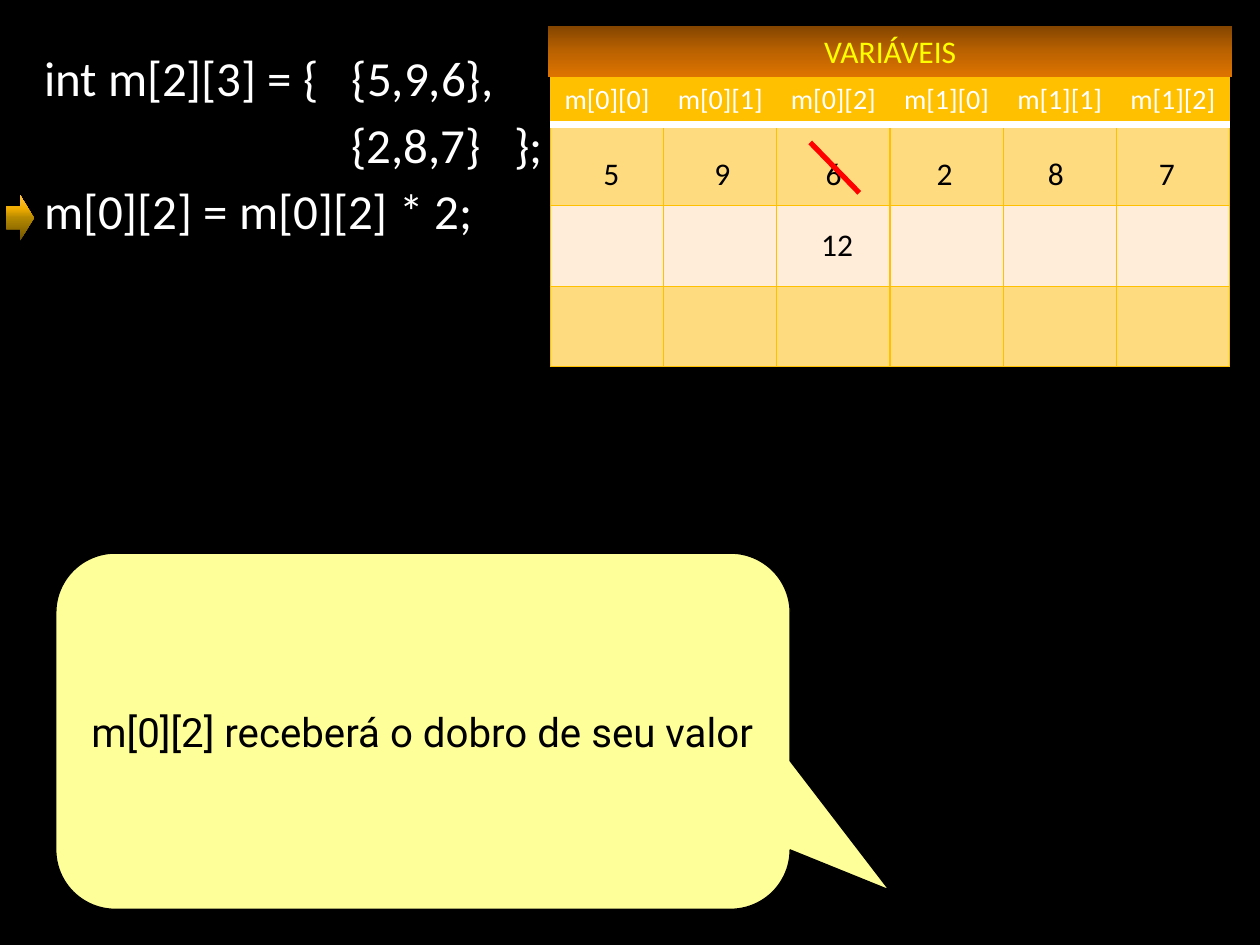
from dataclasses import dataclass
from typing import Any, Sequence

import pptx
import pptx.dml.color
import pptx.enum.shapes
import pptx.enum.text
import pptx.oxml
import pptx.oxml.ns
import pptx.util

Pt = pptx.util.Pt
Color = pptx.dml.color.RGBColor.from_string
Shapes = pptx.enum.shapes.MSO_SHAPE
Align = pptx.enum.text.PP_ALIGN
Anchor = pptx.enum.text.MSO_ANCHOR
NAMESPACE = pptx.oxml.ns.nsdecls("a")


@dataclass(frozen=True)
class Theme:
    background: str = "000000"
    light: str = "FFFFFF"
    dark: str = "000000"
    heading: str = "FFFF00"
    gold: str = "FFC000"
    band_odd: str = "FFDB80"
    band_even: str = "FFECD9"
    callout: str = "FFFF99"
    strike: str = "FF0000"
    heading_stops: tuple = ((0, "844500"), (50, "BB6200"), (100, "DE7400"))
    arrow_stops: tuple = ((0, "705400"), (50, "B48800"), (70, "F0AC00"), (100, "FFC342"))
    font: str = "Calibri"
    callout_font: str = "Roboto"
    code_size: float = 28
    callout_size: float = 23
    body_size: float = 18
    header_size: float = 16


@dataclass(frozen=True)
class Box:
    left: float
    top: float
    width: float
    height: float

    def lengths(self) -> tuple:
        return Pt(self.left), Pt(self.top), Pt(self.width), Pt(self.height)


THEME = Theme()
CODE_LINES = ("int m[2][3] = {   {5,9,6},", "\t{2,8,7}   };", "m[0][2] = m[0][2] * 2;")
CODE_TAB = 175.6
VARIABLES = [f"m[{row}][{column}]" for row in range(2) for column in range(3)]
VALUES = ("5", "9", "6", "2", "8", "7")
VALUE_STEP = 63.5
ROW_HEIGHTS = (27.4, 46.1, 46.1, 46.1)


def write_text(frame: Any, lines: Sequence[str], *, size: float = THEME.body_size,
               color: str = THEME.dark, font: str = THEME.font, align: Any = Align.LEFT,
               anchor: Any = Anchor.TOP, tabs: Sequence[float] = (),
               line_spacing: float = 1.0, space_before: float = 0) -> None:
    frame.word_wrap = True
    frame.vertical_anchor = anchor
    for index, line in enumerate(lines):
        para = frame.paragraphs[0] if index == 0 else frame.add_paragraph()
        para.alignment = align
        para.line_spacing = line_spacing
        para.space_before = Pt(space_before if index else 0)
        if tabs:
            stops = "".join(f'<a:tab pos="{Pt(tab)}" algn="l"/>' for tab in tabs)
            para._p.get_or_add_pPr().append(
                pptx.oxml.parse_xml(f"<a:tabLst {NAMESPACE}>{stops}</a:tabLst>"))
        span = para.add_run()
        span.text = line
        span.font.size = Pt(size)
        span.font.name = font
        span.font.color.rgb = Color(color)


def add_text(slide: Any, box: Box, lines: Sequence[str], margin: float | None = None,
             **text_format: Any) -> None:
    frame = slide.shapes.add_textbox(*box.lengths()).text_frame
    if margin is not None:
        frame.margin_left = frame.margin_right = Pt(margin)
        frame.margin_top = frame.margin_bottom = Pt(margin)
    write_text(frame, lines, **text_format)


def add_plain_shape(slide: Any, kind: Any, box: Box) -> Any:
    shape = slide.shapes.add_shape(kind, *box.lengths())
    shape.shadow.inherit = False
    shape.line.fill.background()
    return shape


def fill_gradient(shape: Any, stops: Sequence[tuple], angle: int) -> None:
    """Fill with (percent, colour) stops; the angle runs clockwise in degrees."""
    marks = "".join(f'<a:gs pos="{percent * 1000}"><a:srgbClr val="{color}"/></a:gs>'
                    for percent, color in stops)
    gradient = pptx.oxml.parse_xml(
        f'<a:gradFill {NAMESPACE} rotWithShape="1"><a:gsLst>{marks}</a:gsLst>'
        f'<a:lin ang="{angle * 60000}" scaled="0"/></a:gradFill>')
    shape._element.spPr.find(pptx.oxml.ns.qn("a:prstGeom")).addnext(gradient)


def set_border(cell: Any, side: str, color: str, width: float) -> None:
    cell._tc.get_or_add_tcPr().append(pptx.oxml.parse_xml(
        f'<a:ln{side} {NAMESPACE} w="{Pt(width)}"><a:solidFill>'
        f'<a:srgbClr val="{color}"/></a:solidFill></a:ln{side}>'))


def add_variable_table(slide: Any, box: Box) -> None:
    table = slide.shapes.add_table(len(ROW_HEIGHTS), len(VARIABLES), *box.lengths()).table
    table.horz_banding = False
    for column in table.columns:
        column.width = Pt(box.width / len(VARIABLES))
    fills = (THEME.gold, THEME.band_odd, THEME.band_even, THEME.band_odd)
    for row, (height, fill) in enumerate(zip(ROW_HEIGHTS, fills)):
        table.rows[row].height = Pt(height)
        for column, name in enumerate(VARIABLES):
            cell = table.cell(row, column)
            for side in "LRTB":
                under_header = (row, side) in ((0, "B"), (1, "T"))
                set_border(cell, side, *((THEME.light, 4.33) if under_header
                                         else (THEME.gold, 0.75)))
            cell.fill.solid()
            cell.fill.fore_color.rgb = Color(fill)
            if row == 0:
                write_text(cell.text_frame, [name], size=THEME.header_size,
                           color=THEME.light, align=Align.CENTER)


def add_callout(slide: Any, box: Box, text: str) -> None:
    callout = add_plain_shape(slide, Shapes.ROUNDED_RECTANGULAR_CALLOUT, box)
    for index, value in enumerate((0.635, 0.446, 0.167)):
        callout.adjustments[index] = value
    callout.fill.solid()
    callout.fill.fore_color.rgb = Color(THEME.callout)
    callout.line.color.rgb = Color(THEME.dark)
    callout.line.width = Pt(0.75)
    write_text(callout.text_frame, [text], size=THEME.callout_size,
               font=THEME.callout_font, align=Align.CENTER, anchor=Anchor.MIDDLE)


def add_strike(slide: Any, start: tuple, end: tuple) -> None:
    strike = slide.shapes.add_connector(pptx.enum.shapes.MSO_CONNECTOR.STRAIGHT,
                                        *map(Pt, start + end))
    strike.line.color.rgb = Color(THEME.strike)
    strike.line.width = Pt(3)
    strike._element.spPr.append(pptx.oxml.parse_xml(f"<a:effectLst {NAMESPACE}/>"))


def main() -> None:
    deck = pptx.Presentation()
    deck.slide_width, deck.slide_height = Pt(720), Pt(540)
    slide = deck.slides.add_slide(deck.slide_layouts.get_by_name("Blank"))
    slide.background.fill.solid()
    slide.background.fill.fore_color.rgb = Color(THEME.background)

    add_text(slide, Box(25.2, 31, 464.4, 108), CODE_LINES, margin=0, size=THEME.code_size,
             color=THEME.light, tabs=[CODE_TAB], line_spacing=0.9, space_before=7.7)
    add_variable_table(slide, Box(314.6, 43.9, 388.1, sum(ROW_HEIGHTS)))
    add_callout(slide, Box(31.9, 316.1, 419.6, 203.5), "m[0][2] receberá o dobro de seu valor")

    heading = add_plain_shape(slide, Shapes.RECTANGLE, Box(313.2, 15, 391, 29))
    fill_gradient(heading, THEME.heading_stops, 90)
    write_text(heading.text_frame, ["VARIÁVEIS"], color=THEME.heading, align=Align.CENTER)

    add_text(slide, Box(337.7, 84.2, 345.6, 29), ["\t".join(VALUES)],
             tabs=[VALUE_STEP * step for step in range(1, len(VALUES))])
    arrow = add_plain_shape(slide, Shapes.RIGHT_ARROW, Box(3.6, 111.6, 15.8, 25.9))
    fill_gradient(arrow, THEME.arrow_stops, 270)
    add_strike(slide, (463, 81.4), (491, 110.2))
    add_text(slide, Box(462.2, 125.3, 33.1, 29), ["12"])
    deck.save("out.pptx")


if __name__ == "__main__":
    main()
